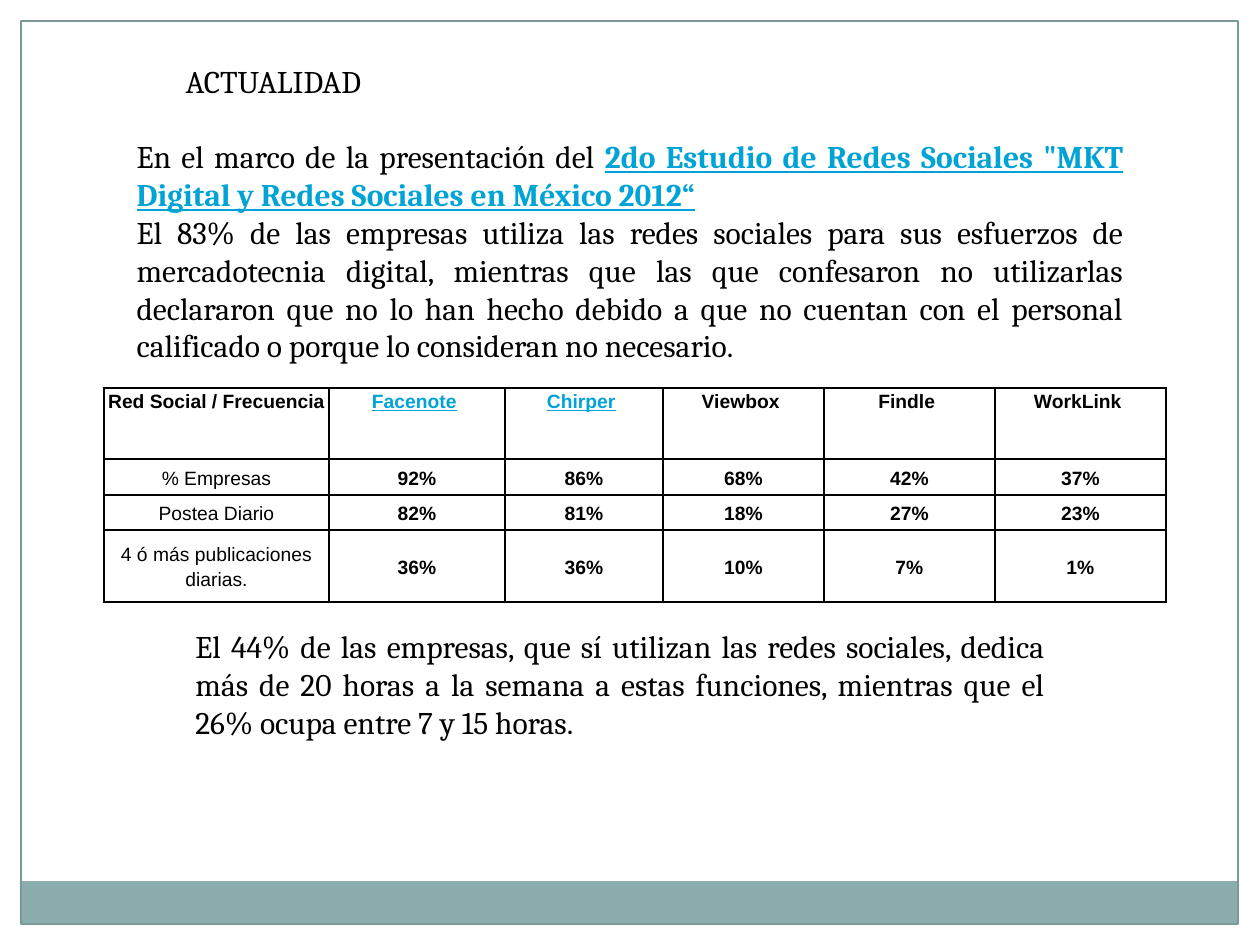
"""Build the slide on how often firms post on social networks."""
from lxml.etree import SubElement
from pptx import Presentation
from pptx.dml.color import RGBColor
from pptx.enum.shapes import MSO_SHAPE
from pptx.enum.text import MSO_ANCHOR, MSO_AUTO_SIZE, PP_ALIGN
from pptx.oxml import parse_xml
from pptx.oxml.ns import nsdecls, qn
from pptx.util import Pt

SCALE = 914400 / 126
COLORS = {
    "black": "000000",
    "white": "FFFFFF",
    "link": "00A3D6",
    "band": "8CADAE",
    "frame": "7C999A",
}


def px(*nums):
    return [round(n * SCALE) for n in nums]


def write(para, text, color="black", **form):
    run = para.add_run()
    run.text = text
    run.font.color.rgb = RGBColor.from_string(COLORS[color])
    for key, val in form.items():
        setattr(run.font, key, val)


prs = Presentation()
prs.slide_width, prs.slide_height = px(1260, 945)
slide = prs.slides.add_slide(prs.slide_layouts[1])
shapes = slide.shapes

panels = [
    ((0, 0, 1260, 21), "white"),
    ((1239, 0, 21, 945), "white"),
    ((0, 0, 21, 945), "white"),
    ((20, 881, 1218, 43), "band"),
]
for place, color in panels:
    panel = shapes.add_shape(MSO_SHAPE.RECTANGLE, *px(*place))
    panel.fill.solid()
    panel.fill.fore_color.rgb = RGBColor.from_string(COLORS[color])
    panel.line.fill.background()
    panel.shadow.inherit = False
frame = shapes.add_shape(MSO_SHAPE.RECTANGLE, *px(21, 21, 1217, 903))
frame.fill.background()
frame.line.color.rgb = RGBColor.from_string(COLORS["frame"])
frame.line.width = Pt(0.75)
frame.shadow.inherit = False

link = {"color": "link", "bold": True, "underline": True}
study = '2do Estudio de Redes Sociales "MKT Digital y Redes Sociales en México 2012“'
usage = (
    "El 83% de las empresas utiliza las redes sociales para sus esfuerzos de "
    "mercadotecnia digital, mientras que las que confesaron no utilizarlas "
    "declararon que no lo han hecho debido a que no cuentan con el personal "
    "calificado o porque lo consideran no necesario."
)
hours = (
    "El 44% de las empresas, que sí utilizan las redes sociales, dedica más de "
    "20 horas a la semana a estas funciones, mientras que el 26% ocupa entre "
    "7 y 15 horas."
)
intro = [("En el marco de la presentación del ", {}), (study, link)]
blocks = [
    (shapes.title, (173, 56, 586, 50), PP_ALIGN.LEFT, [[("ACTUALIDAD", {})]]),
    (slide.placeholders[1], (124, 131, 1012, 394), PP_ALIGN.JUSTIFY,
     [intro, [(usage, {})]]),
    (shapes.add_textbox(0, 0, 0, 0), (183, 621, 874, 165), PP_ALIGN.JUSTIFY,
     [[(hours, {})]]),
]
for box, place, align, paras in blocks:
    box.left, box.top, box.width, box.height = px(*place)
    body = box.text_frame
    body.word_wrap = True
    body.auto_size = MSO_AUTO_SIZE.NONE
    body.vertical_anchor = MSO_ANCHOR.TOP
    for i, runs in enumerate(paras):
        para = body.add_paragraph() if i else body.paragraphs[0]
        para.alignment = align
        para.space_before = Pt(0)
        props = para._p.get_or_add_pPr()
        props.set("marL", "0")
        props.set("indent", "0")
        SubElement(props, qn("a:buNone"))
        for text, form in runs:
            write(para, text, **{"size": Pt(18), "name": "Cambria", **form})

rows = [
    ["Red Social / Frecuencia", "Facenote", "Chirper", "Viewbox", "Findle", "WorkLink"],
    ["% Empresas", "92%", "86%", "68%", "42%", "37%"],
    ["Postea Diario", "82%", "81%", "18%", "27%", "23%"],
    ["4 ó más publicaciones diarias.", "36%", "36%", "10%", "7%", "1%"],
]
widths = px(225, 176, 158, 161, 171, 171)
heights = px(71, 36, 35, 72)
table = shapes.add_table(
    len(rows), len(widths), *px(104, 388), sum(widths), sum(heights)
).table
table.first_row = table.horz_banding = False
for col, width in zip(table.columns, widths):
    col.width = width
for r, row in enumerate(rows):
    table.rows[r].height = heights[r]
    for c, text in enumerate(row):
        cell = table.cell(r, c)
        for side in ("left", "right", "top", "bottom"):
            setattr(cell, f"margin_{side}", 0)
        cell.vertical_anchor = MSO_ANCHOR.MIDDLE if r else MSO_ANCHOR.TOP
        for side in "LRTB":
            cell._tc.get_or_add_tcPr().append(parse_xml(
                f'<a:ln{side} {nsdecls("a")} w="12700"><a:solidFill>'
                f'<a:srgbClr val="{COLORS["black"]}"/></a:solidFill></a:ln{side}>'
            ))
        cell.fill.background()
        para = cell.text_frame.paragraphs[0]
        para.alignment = PP_ALIGN.CENTER
        para.line_spacing = 1.15
        form = {"size": Pt(11), "name": "Arial", "bold": r == 0 or c > 0}
        linked = r == 0 and c in (1, 2)
        write(para, text, **{**form, **(link if linked else {})})
        if r == 0 and c:
            write(para, " ", **form)

prs.save("out.pptx")
